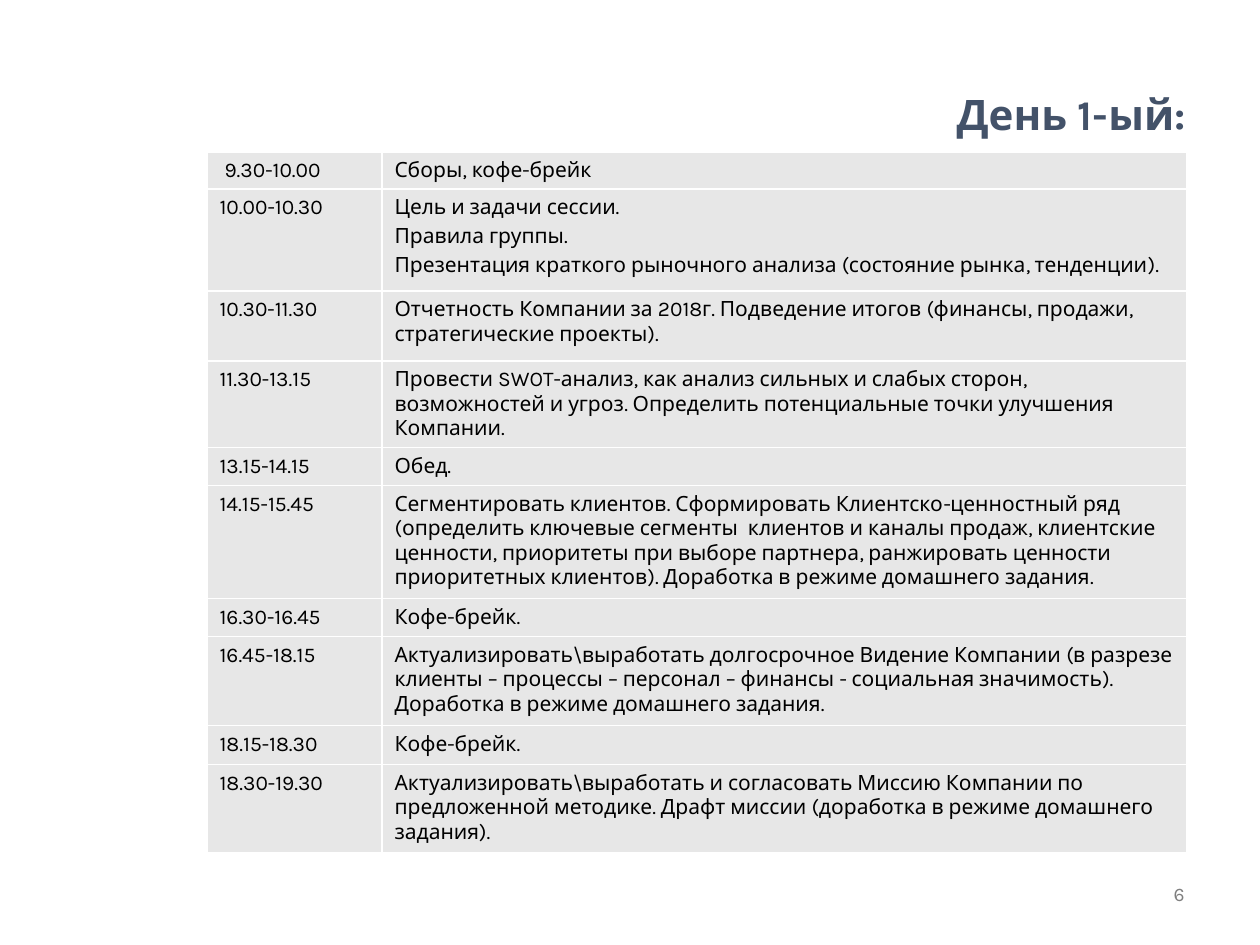
from lxml import etree
from pptx import Presentation
from pptx import util as u
from pptx.dml.color import RGBColor
from pptx.enum import text
from pptx.oxml.ns import qn

SCALE = 914400 // 126
FONT = "Karla"
TITLE = "День 1-ый:"
PAGE_NUMBER = "6"
AGENDA = [
    (37, " 9.30-10.00", ["Сборы, кофе-брейк"]),
    (102, "10.00-10.30", [
        "Цель и задачи сессии.",
        "Правила группы.",
        "Презентация краткого рыночного анализа (состояние рынка, тенденции).",
    ]),
    (70, "10.30-11.30", [
        "Отчетность Компании за 2018г. Подведение итогов (финансы, продажи, "
        "стратегические проекты).",
    ]),
    (86, "11.30-13.15", [
        "Провести SWOT-анализ, как анализ сильных и слабых сторон, возможностей и угроз. "
        "Определить потенциальные точки улучшения Компании.",
    ]),
    (38, "13.15-14.15", ["Обед."]),
    (113, "14.15-15.45", [
        "Сегментировать клиентов. Сформировать Клиентско-ценностный ряд "
        "(определить ключевые сегменты  клиентов и каналы продаж, клиентские ценности, "
        "приоритеты при выборе партнера, ранжировать ценности приоритетных клиентов). "
        "Доработка в режиме домашнего задания.",
    ]),
    (38, "16.30-16.45", ["Кофе-брейк."]),
    (89, "16.45-18.15", [
        "Актуализировать\\выработать долгосрочное Видение Компании (в разрезе "
        "клиенты – процессы – персонал – финансы - социальная значимость). "
        "Доработка в режиме домашнего задания.",
    ]),
    (39, "18.15-18.30", ["Кофе-брейк."]),
    (88, "18.30-19.30", [
        "Актуализировать\\выработать и согласовать Миссию Компании по предложенной методике. "
        "Драфт миссии (доработка в режиме домашнего задания).",
    ]),
]
COLUMNS = [175, 805]
TABLE_LEFT, TABLE_TOP = 207, 152


def px(value):
    return u.Emu(value * SCALE)


def color(code):
    return RGBColor.from_string(code)


def style(paragraph, size, code, bold=False):
    for span in paragraph.runs:
        span.font.name = FONT
        span.font.size = u.Pt(size)
        span.font.bold = bold
        span.font.color.rgb = color(code)


def add_label(page, words, area, size, code, bold, anchor):
    box = page.shapes.add_textbox(*map(px, area))
    frame = box.text_frame
    frame.word_wrap = True
    frame.vertical_anchor = anchor
    frame.text = words
    frame.paragraphs[0].alignment = text.PP_ALIGN.RIGHT
    style(frame.paragraphs[0], size, code, bold)


def add_borders(cell, code):
    properties = cell._tc.get_or_add_tcPr()
    for index, side in enumerate(("lnL", "lnR", "lnT", "lnB")):
        line = etree.Element(qn(f"a:{side}"), w=str(u.Pt(1)))
        fill = etree.SubElement(line, qn("a:solidFill"))
        etree.SubElement(fill, qn("a:srgbClr"), val=code)
        properties.insert(index, line)


def fill_cell(cell, lines):
    cell.fill.solid()
    cell.fill.fore_color.rgb = color("E7E7E7")
    add_borders(cell, "FFFFFF")
    cell.text_frame.text = "\n".join(lines)
    for index, paragraph in enumerate(cell.text_frame.paragraphs):
        if index:
            paragraph.space_before = u.Pt(2.4)
        style(paragraph, 12, "000000")


def add_agenda(page):
    height = sum(row[0] for row in AGENDA)
    area = (TABLE_LEFT, TABLE_TOP, sum(COLUMNS), height)
    table = page.shapes.add_table(len(AGENDA), len(COLUMNS), *map(px, area)).table
    table.first_row = False
    table.horz_banding = False
    for column, width in zip(table.columns, COLUMNS):
        column.width = px(width)
    for row, (height, time, topics) in zip(table.rows, AGENDA):
        row.height = px(height)
        fill_cell(row.cells[0], [time])
        fill_cell(row.cells[1], topics)


def main():
    deck = Presentation()
    deck.slide_width, deck.slide_height = u.Inches(10), u.Inches(7.5)
    page = deck.slides.add_slide(deck.slide_layouts[6])
    add_agenda(page)
    add_label(page, TITLE, (454, 82, 744, 64), 24, "435269", True, text.MSO_ANCHOR.TOP)
    add_label(page, PAGE_NUMBER, (903, 861, 294, 66), 11, "7F7F7F", False, text.MSO_ANCHOR.MIDDLE)
    deck.save("out.pptx")


if __name__ == "__main__":
    main()
